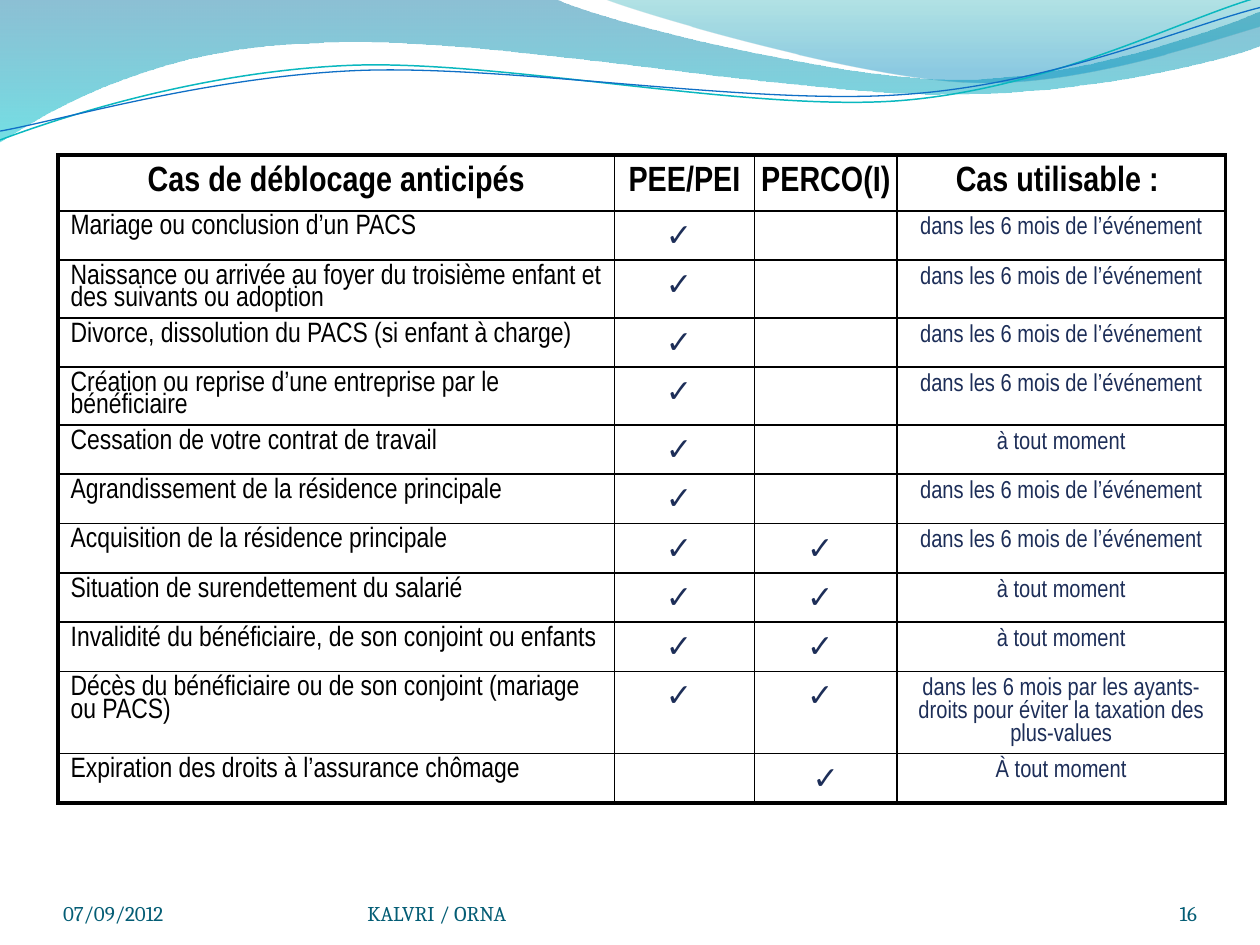
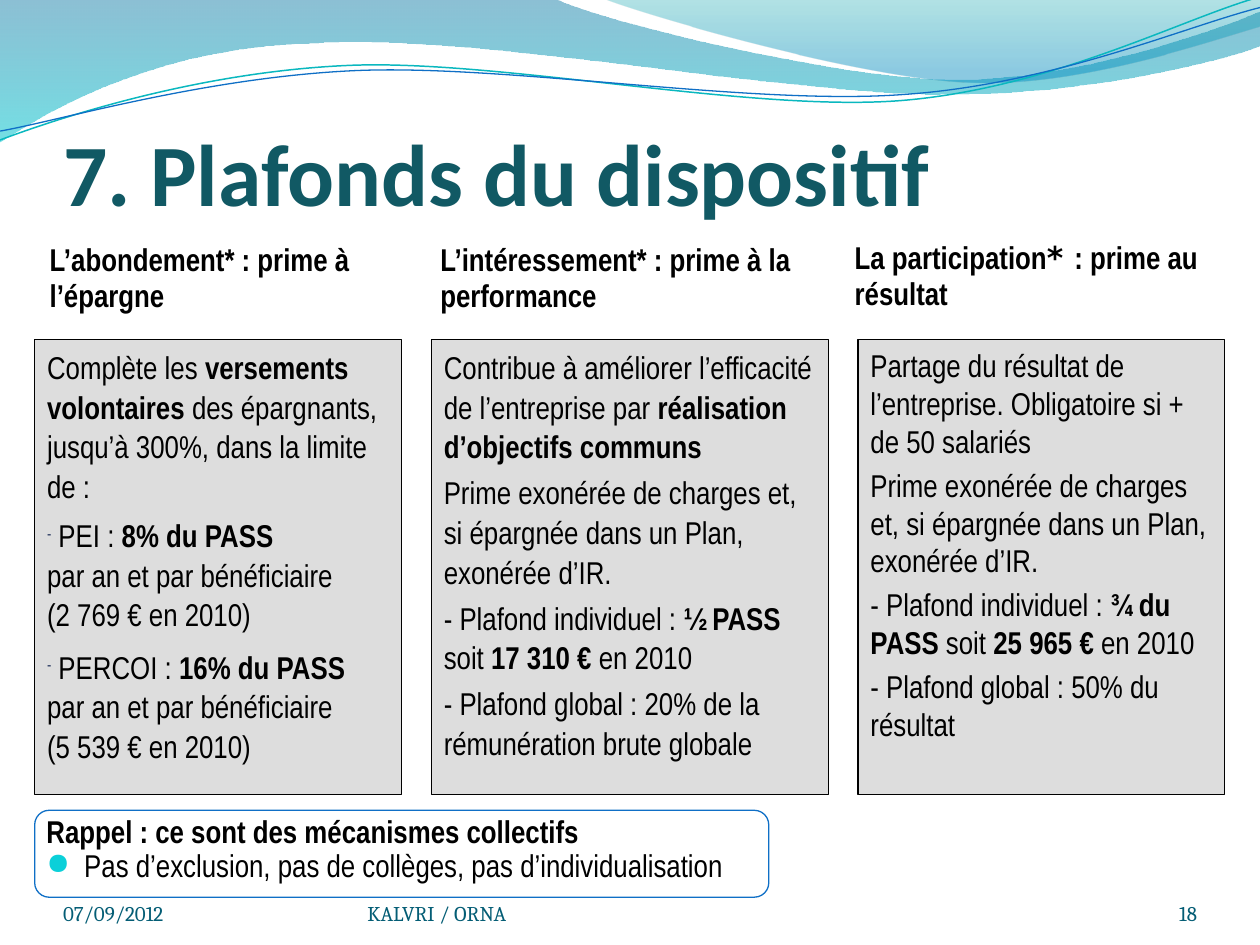
from lxml.etree import SubElement
from pptx import Presentation
from pptx.dml.color import RGBColor
from pptx.enum.shapes import MSO_SHAPE
from pptx.enum.text import MSO_ANCHOR, MSO_AUTO_SIZE, PP_ALIGN
from pptx.oxml import parse_xml
from pptx.oxml.ns import nsdecls, qn
from pptx.util import Pt

BLACK, WHITE, GREY, NAVY = "000000", "FFFFFF", "DDDDDD", "1D2E58"
TITLE, FOOTER, BLUE, TEAL, BULLET = "115964", "045D75", "0F6FC6", "0AB8BF", "0BD0D9"
NARROW, SYMBOL = "Arial Narrow", "DejaVu Sans"

BIG_WAVE = [(0, 0), (317, -0.7), (343, 12, 478, 45, 546, 45.4), (614, 45.4, 690, 19, 720, 6.5),
            (720.7, 26), (708, 31.7, 626, 54.7, 537, 54), (448, 54, 275, 20, 185, 24.5),
            (93, 26, 33, 60, -0.7, 81.4), (0, 0)]
SMALL_WAVE = [(345, -0.7), (366, 8, 491, 44.6, 554, 46.8), (616, 49.7, 692, 23, 720, 15),
              (720, 0), (345, -0.7)]
TEAL_LINE = [(0, 80), (34.6, 67, 114, 41, 199.5, 37.4), (284.4, 33.8, 427, 64, 513.4, 57.6),
             (599.8, 51, 675.4, 10.8, 718.6, -1.4)]
BLUE_LINE = [(0, 74.9), (33.8, 69, 118, 44, 203.8, 40.3), (290, 36.7, 430, 60.5, 516.2, 54),
             (602, 48.2, 677.5, 15, 720, 4.3)]

COLUMN_WIDTHS = [318, 80, 81.5, 187.5]
HEADERS = ["Cas de déblocage anticipés", "PEE/PEI", "PERCO(I)", "Cas utilisable : "]
SIX_MONTHS, ANY_TIME, CHECK = "dans les 6 mois de l’événement", "à tout moment", "✓ "
CASES = [
    ("Mariage ou conclusion d’un PACS", CHECK, "", SIX_MONTHS),
    ("Naissance ou arrivée au foyer du troisième enfant et des suivants ou adoption",
     CHECK, "", SIX_MONTHS),
    ("Divorce, dissolution du PACS (si enfant à charge)", CHECK, "", SIX_MONTHS),
    ("Création ou reprise d’une entreprise par le bénéficiaire", CHECK, "", SIX_MONTHS),
    ("Cessation de votre contrat de travail", CHECK, "", ANY_TIME),
    ("Agrandissement de la résidence principale", CHECK, "", SIX_MONTHS),
    ("Acquisition de la résidence principale", CHECK, CHECK, SIX_MONTHS),
    ("Situation de surendettement du salarié", CHECK, CHECK, ANY_TIME),
    ("Invalidité du bénéficiaire, de son conjoint ou enfants", CHECK, CHECK, ANY_TIME),
    ("Décès du bénéficiaire ou de son conjoint (mariage ou PACS)", CHECK, CHECK,
     "dans les 6 mois par les ayants-droits pour éviter la taxation des plus-values"),
    ("Expiration des droits à l’assurance chômage", "", "✓", "À tout moment"),
]
ROW_HEIGHTS = [32, 28.2, 33, 28.2, 33, 28.2, 28.2, 28.2, 28.2, 28.2, 47, 28.2]

EXEMPT = "Prime exonérée de charges et, si épargnée dans un Plan, exonérée d’IR."
SCHEMES = [
    (("L’abondement* : prime à l’épargne", 23.4, 129.5, 204.5), (19.8, 209.5), 1.05, [
        ("Complète les |versements volontaires| des épargnants, jusqu’à 300%, "
         "dans la limite de :", 0, ""),
        (" PEI : |8% du PASS|\npar an et par bénéficiaire", 5.4, "-"),
        ("(2 769 € en 2010)", 0, ""),
        (" PERCOI : |16% du PASS|\npar an et par bénéficiaire\n(5 539 € en 2010)", 7.2, "-"),
    ]),
    (("L’intéressement* : prime à la performance", 246.6, 129.5, 232.5), (246.5, 226.8), 1.05, [
        ("Contribue à améliorer l’efficacité de l’entreprise par "
         "|réalisation d’objectifs communs|", 0, ""),
        (EXEMPT, 3.6, ""),
        ("- Plafond individuel : |½ PASS| soit |17 310 €| en 2010", 3.6, ""),
        ("- Plafond global : 20% de la rémunération brute globale", 3.6, ""),
    ]),
    (("La participation|* |: prime au résultat", 483.4, 128, 215), (490.3, 209.5), 1, [
        ("Partage du résultat de l’entreprise. Obligatoire si + de 50 salariés", 0, ""),
        (EXEMPT, 3.6, ""),
        ("- Plafond individuel : |¾ du PASS| soit |25 965 €| en 2010", 3.6, ""),
        ("- Plafond global : 50% du résultat", 3.6, ""),
    ]),
]


def rgb(value):
    return RGBColor.from_string(value)


def style(r, size=18, font=NARROW, color=BLACK, bold=False):
    r.font.size, r.font.name, r.font.bold = Pt(size), font, bold
    r.font.color.rgb = rgb(color)


def write(p, text, accent, spacing=1, before=0, **base):
    for i, part in enumerate(text.split("|")):
        for j, line in enumerate(part.split("\n")):
            if j:
                p.add_line_break()
            if line:
                r = p.add_run()
                r.text = line
                style(r, **{**base, **(accent if i % 2 else {})})
    p.line_spacing = spacing
    p.space_before = Pt(before)


def add_bullet(p, char, color, percent, indent=0, font=NARROW):
    pPr = p._p.get_or_add_pPr()
    pPr.set("marL", str(Pt(indent)))
    pPr.set("indent", str(-Pt(indent)))
    if char:
        SubElement(SubElement(pPr, qn("a:buClr")), qn("a:srgbClr"), val=color)
        SubElement(pPr, qn("a:buSzPct"), val=str(percent * 1000))
        SubElement(pPr, qn("a:buFont"), typeface=font)
        SubElement(pPr, qn("a:buChar"), char=char)


def set_frame(tf, anchor, left=0, top=0):
    tf.word_wrap = True
    tf.auto_size = MSO_AUTO_SIZE.NONE
    tf.vertical_anchor = anchor
    tf.margin_left = tf.margin_right = Pt(left)
    tf.margin_top = tf.margin_bottom = Pt(top)


def add_text(s, x, y, w, h, anchor, left=0, top=0):
    tf = s.shapes.add_textbox(Pt(x), Pt(y), Pt(w), Pt(h)).text_frame
    set_frame(tf, anchor, left, top)
    return tf.paragraphs[0]


def add_panel(s, kind, x, y, w, h, line, fill, left, top):
    sp = s.shapes.add_shape(kind, Pt(x), Pt(y), Pt(w), Pt(h))
    sp.shadow.inherit = False
    if fill:
        sp.fill.solid()
        sp.fill.fore_color.rgb = rgb(fill)
    else:
        sp.fill.background()
    sp.line.color.rgb = rgb(line)
    sp.line.width = Pt(0.75)
    set_frame(sp.text_frame, MSO_ANCHOR.TOP, left, top)
    return sp.text_frame


def next_paragraph(tf, i):
    p = tf.add_paragraph() if i else tf.paragraphs[0]
    p.alignment = PP_ALIGN.LEFT
    return p


def add_curve(s, segments, closed):
    points = [(100 * seg[k], 100 * seg[k + 1]) for seg in segments for k in range(0, len(seg), 2)]
    builder = s.shapes.build_freeform(*points[0], scale=Pt(1) / 100)
    builder.add_line_segments(points[1:], close=closed)
    sp = builder.convert_to_shape()
    sp.shadow.inherit = False
    lines = iter(list(sp._element.iter(qn("a:lnTo"))))
    for seg in segments[1:]:
        group = [next(lines) for _ in range(len(seg) // 2)]
        if len(group) == 3:
            group[0].tag
            curve = parse_xml(f'<a:cubicBezTo {nsdecls("a")}/>')
            group[0].addprevious(curve)
            for line in group:
                curve.append(line[0])
                line.getparent().remove(line)
    return sp


def add_wave(s, segments, stops):
    sp = add_curve(s, segments, True)
    sp.line.fill.background()
    sp.fill.gradient()
    sp.fill.gradient_angle = 270
    for stop, (position, color, _) in zip(sp.fill.gradient_stops, stops):
        stop.position = position
        stop.color.rgb = rgb(color)
    for clr, (_, _, alpha) in zip(sp._element.spPr.iter(qn("a:srgbClr")), stops):
        SubElement(clr, qn("a:alpha"), val=str(alpha * 1000))


def add_wave_line(s, segments, color, width):
    sp = add_curve(s, segments, False)
    sp.fill.background()
    sp.line.color.rgb = rgb(color)
    sp.line.width = Pt(width)


def add_waves(s):
    add_wave(s, BIG_WAVE, [(0, "0074A1", 45), (1, "00C6CF", 55)])
    add_wave(s, SMALL_WAVE, [(0, "00A1A9", 30), (0.8, "008BBF", 45)])
    add_wave_line(s, TEAL_LINE, TEAL, 0.85)
    add_wave_line(s, BLUE_LINE, BLUE, 0.75)


def add_footer(s, number):
    for text, x, w, align in [("07/09/2012", 36, 168, PP_ALIGN.LEFT),
                              (number, 624, 60, PP_ALIGN.RIGHT),
                              ("KALVRI / ORNA", 210, 264, PP_ALIGN.LEFT)]:
        p = add_text(s, x, 500, w, 28.8, MSO_ANCHOR.BOTTOM)
        p.alignment = align
        write(p, text, {}, size=12, font="Cambria", color=FOOTER)


def set_borders(cell, widths):
    tcPr = cell._tc.get_or_add_tcPr()
    for i, (side, width) in enumerate(zip("LRTB", widths)):
        tcPr.insert(i, parse_xml(
            f'<a:ln{side} {nsdecls("a")} w="{Pt(width)}"><a:solidFill>'
            f'<a:srgbClr val="{BLACK}"/></a:solidFill></a:ln{side}>'))


def fill_cell(cell, text, row, col):
    p = cell.text_frame.paragraphs[0]
    p.alignment = PP_ALIGN.CENTER if row == 0 or col else PP_ALIGN.LEFT
    cell.margin_top = cell.margin_bottom = Pt(3.6)
    if col == 2:
        cell.margin_left = cell.margin_right = Pt(3)
    if not text:
        SubElement(p._p, qn("a:endParaRPr"), sz="1400")
    elif row == 0:
        cell.vertical_anchor = MSO_ANCHOR.MIDDLE
        write(p, text, {}, size=20, bold=True)
    elif col == 0:
        write(p, text, {}, size=16, spacing=0.85)
    elif col == 3:
        write(p, text, {}, size=14, color=NAVY)
    else:
        write(p, text, {}, font=SYMBOL, color=NAVY, bold=True)


def add_cases_table(s):
    rows = [HEADERS, *CASES]
    n, m = len(rows), len(HEADERS)
    table = s.shapes.add_table(n, m, Pt(33.2), Pt(88.5), Pt(sum(COLUMN_WIDTHS)),
                               Pt(sum(ROW_HEIGHTS))).table
    table.first_row = table.horz_banding = False
    for column, width in zip(table.columns, COLUMN_WIDTHS):
        column.width = Pt(width)
    for i, row in enumerate(rows):
        table.rows[i].height = Pt(ROW_HEIGHTS[i])
        for j, text in enumerate(row):
            cell = table.cell(i, j)
            if i:
                cell.fill.background()
            else:
                cell.fill.solid()
                cell.fill.fore_color.rgb = rgb(WHITE)
            fill_cell(cell, text, i, j)
            outer = (j == 0, j == m - 1, i == 0, i == n - 1)
            set_borders(cell, [2.25 if edge else 1 for edge in outer])


def set_title(s, text):
    sp = s.shapes.title
    sp.left, sp.top, sp.width, sp.height = Pt(36), Pt(55.5), Pt(648), Pt(72.7)
    tf = sp.text_frame
    set_frame(tf, MSO_ANCHOR.BOTTOM)
    tf.margin_top = Pt(3.6)
    tf.text = text
    p = tf.paragraphs[0]
    p.alignment = PP_ALIGN.LEFT
    style(p.runs[0], 50, "Calibri", TITLE, True)


def add_scheme(s, heading, panel, spacing, paragraphs):
    text, x, y, w = heading
    p = add_text(s, x, y, w, 60, MSO_ANCHOR.MIDDLE, 5, 3)
    write(p, text, {"font": SYMBOL}, bold=True, spacing=0.95)
    x, w = panel
    tf = add_panel(s, MSO_SHAPE.RECTANGLE, x, 194.2, w, 260, BLACK, GREY, 7.2, 3.6)
    for i, (text, before, bullet) in enumerate(paragraphs):
        p = next_paragraph(tf, i)
        write(p, text, {"bold": True}, spacing=spacing, before=before)
        add_bullet(p, bullet, NAVY, 50)


def add_reminder(s):
    tf = add_panel(s, MSO_SHAPE.ROUNDED_RECTANGLE, 19.8, 463, 419.5, 49.7, BLUE, None, 4.3, 1)
    for i, (text, bullet) in enumerate([
            ("|Rappel : ce sont des mécanismes collectifs", ""),
            ("Pas d’exclusion, pas de collèges, pas d’individualisation", "●")]):
        p = next_paragraph(tf, i)
        write(p, text, {"bold": True}, spacing=0.9)
        add_bullet(p, bullet, BULLET, 95, 21.6, "OpenSymbol")


def main():
    prs = Presentation()
    prs.slide_width, prs.slide_height = Pt(720), Pt(540)

    s = prs.slides.add_slide(prs.slide_layouts[6])
    add_waves(s)
    add_cases_table(s)
    add_footer(s, "16")

    s = prs.slides.add_slide(prs.slide_layouts[5])
    add_waves(s)
    set_title(s, "7. Plafonds du dispositif")
    add_reminder(s)
    for scheme in SCHEMES:
        add_scheme(s, *scheme)
    add_footer(s, "18")

    prs.save("out.pptx")


if __name__ == "__main__":
    main()
